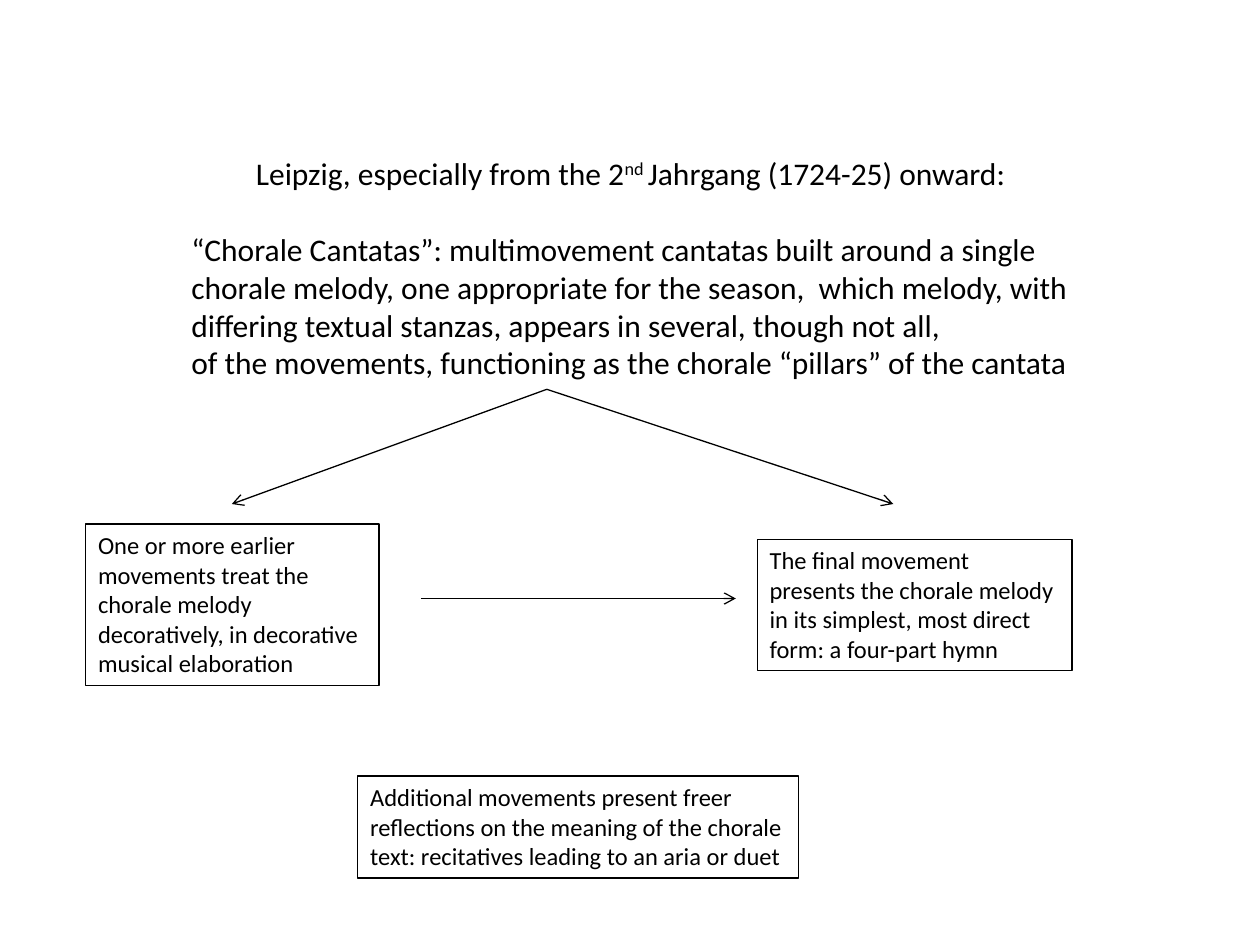
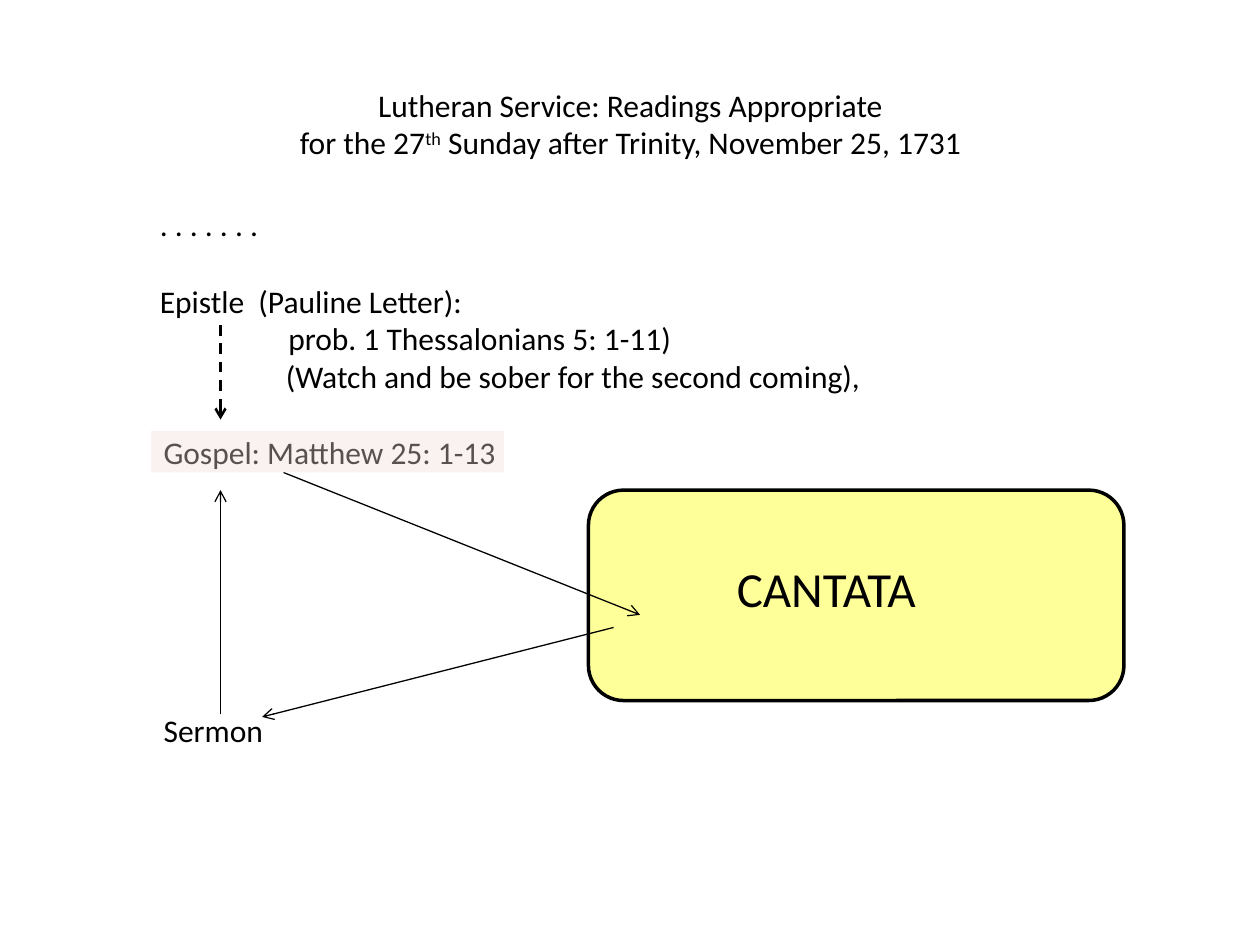
from lxml import etree
from pptx import Presentation
from pptx.dml.color import RGBColor
from pptx.enum.dml import MSO_LINE
from pptx.enum.shapes import MSO_CONNECTOR, MSO_SHAPE
from pptx.enum.text import MSO_AUTO_SIZE, PP_ALIGN
from pptx.oxml.ns import qn
from pptx.util import Inches, Pt

FONT = "Calibri"
BLACK, YELLOW, PINK = "000000", "FFFF00", "F2DCDB"
BLANK_LINE = 22  # points, one line of body text

# Text between carets is superscript. Each box is (place, paragraphs, format);
# a paragraph is its text, or its text with a format of its own.
CHORALE_TEXTS = [
    ((6.01, 4.28, 2.5, 1.04),
     ["The final movement presents the chorale melody in its simplest, "
      "most direct form: a four-part hymn"], {"size": 14, "border": 0.75}),
    ((0.68, 4.16, 2.33, 1.28),
     ["One or more earlier movements treat the chorale melody decoratively, "
      "in decorative musical elaboration"], {"size": 14, "border": 0.75}),
    ((2.84, 6.16, 3.5, 0.81),
     ["Additional movements present freer reflections on the meaning of the "
      "chorale text: recitatives leading to an aria or duet"],
     {"size": 14, "border": 0.75}),
    ((1.42, 1.17, 7.17, 1.92),
     [("Leipzig, especially from the 2^nd ^Jahrgang (1724-25) onward:",
       {"align": PP_ALIGN.CENTER}),
      ("“Chorale Cantatas”: multimovement cantatas built around a single "
       "chorale melody, one appropriate for the season,  which melody, with "
       "differing textual stanzas, appears in several, though not all,",
       {"before": BLANK_LINE}),
      "of the movements, functioning as the chorale “pillars” of the cantata"],
     {}),
]
PILLARS = (4.34, 3.09)
CHORALE_ARROWS = [
    ((3.34, 4.75), (5.84, 4.75), {}),
    (PILLARS, (1.84, 4), {}),
    (PILLARS, (7.09, 4), {}),
]

SERVICE_TEXTS = [
    ((1.17, 1.58, 6.17, 1.62),
     [". . . . . . .",
      ("Epistle  (Pauline Letter):", {"before": BLANK_LINE}),
      ("prob. 1 Thessalonians 5: 1-11)", {"indent": 1.02}),
      ("(Watch and be sober for the second coming),", {"indent": 1})], {}),
    ((0.42, 0.63, 9.17, 0.71),
     [("Lutheran Service: Readings Appropriate", {"align": PP_ALIGN.CENTER}),
      ("for the 27^th^ Sunday after Trinity, November 25, 1731",
       {"align": PP_ALIGN.CENTER})], {}),
    ((1.2, 5.59, 1.41, 0.4), ["Sermon"], {}),
    ((1.2, 3.39, 3.8, 0.4), ["Gospel: Matthew 25: 1-13"], {}),
]
CANTATA_PANEL = (4.67, 3.89, 4.25, 1.67)
CANTATA_LABEL = ((5.75, 4.38, 2.17, 0.57), ["CANTATA"], {"size": 28})
GOSPEL_HIGHLIGHT = (1.2, 3.42, 2.8, 0.33)
READINGS_X = 1.75
SERVICE_ARROWS = [
    ((2.25, 3.75), (5.08, 4.88), {}),
    ((4.87, 4.98), (2.08, 5.69), {}),
    ((READINGS_X, 5.67), (READINGS_X, 3.89), {}),
    ((READINGS_X, 2.58), (READINGS_X, 3.33), {"width": 1.5, "dashed": True}),
]


def color(value):
    return RGBColor.from_string(value)


def inches(values):
    return [Inches(value) for value in values]


def set_line(line, width):
    line.color.rgb = color(BLACK)
    line.width = Pt(width)


def write(paragraph, text, size=18, align=PP_ALIGN.LEFT, before=0, indent=0):
    paragraph.alignment = align
    paragraph.space_before = Pt(before)
    if indent:
        properties = paragraph._p.get_or_add_pPr()
        properties.set("marL", str(Inches(indent)))
        properties.set("indent", "0")
    for index, part in enumerate(text.split("^")):
        run = paragraph.add_run()
        run.text = part
        run.font.name = FONT
        run.font.size = Pt(size)
        run.font.color.rgb = color(BLACK)
        if index % 2:
            run._r.get_or_add_rPr().set("baseline", "30000")


def add_text(slide, place, paragraphs, size=18, border=None):
    box = slide.shapes.add_textbox(*inches(place))
    frame = box.text_frame
    frame.word_wrap = True
    frame.auto_size = MSO_AUTO_SIZE.SHAPE_TO_FIT_TEXT
    if border:
        set_line(box.line, border)
    for index, item in enumerate(paragraphs):
        text, style = (item, {}) if isinstance(item, str) else item
        paragraph = frame.add_paragraph() if index else frame.paragraphs[0]
        write(paragraph, text, size=size, **style)


def add_panel(slide, kind, place, fill, opacity, border=None):
    """Add a see-through shape; opacity is in percent."""
    shape = slide.shapes.add_shape(kind, *inches(place))
    shape.shadow.inherit = False
    shape.fill.solid()
    shape.fill.fore_color.rgb = color(fill)
    fill_color = shape._element.spPr.find(f".//{qn('a:srgbClr')}")
    alpha = etree.SubElement(fill_color, qn("a:alpha"))
    alpha.set("val", str(opacity * 1000))
    if border:
        set_line(shape.line, border)
    else:
        shape.line.fill.background()


def add_arrow(slide, start, end, width=0.75, dashed=False):
    arrow = slide.shapes.add_connector(
        MSO_CONNECTOR.STRAIGHT, *inches(start + end))
    set_line(arrow.line, width)
    if dashed:
        arrow.line.dash_style = MSO_LINE.DASH
    properties = arrow._element.spPr
    tail = etree.SubElement(properties.find(qn("a:ln")), qn("a:tailEnd"))
    tail.set("type", "arrow")
    etree.SubElement(properties, qn("a:effectLst"))


def add_all(slide, add, items):
    for first, second, style in items:
        add(slide, first, second, **style)


def build_chorale_slide(slide):
    add_all(slide, add_text, CHORALE_TEXTS)
    add_all(slide, add_arrow, CHORALE_ARROWS)


def build_service_slide(slide):
    add_all(slide, add_text, SERVICE_TEXTS)
    add_panel(slide, MSO_SHAPE.ROUNDED_RECTANGLE, CANTATA_PANEL, YELLOW, 40,
              border=2)
    add_all(slide, add_text, [CANTATA_LABEL])
    add_all(slide, add_arrow, SERVICE_ARROWS)
    add_panel(slide, MSO_SHAPE.RECTANGLE, GOSPEL_HIGHLIGHT, PINK, 37)


def main():
    presentation = Presentation()
    presentation.slide_width = Inches(10)
    presentation.slide_height = Inches(7.5)
    for build in (build_chorale_slide, build_service_slide):
        build(presentation.slides.add_slide(presentation.slide_layouts[6]))
    presentation.save("out.pptx")


if __name__ == "__main__":
    main()
